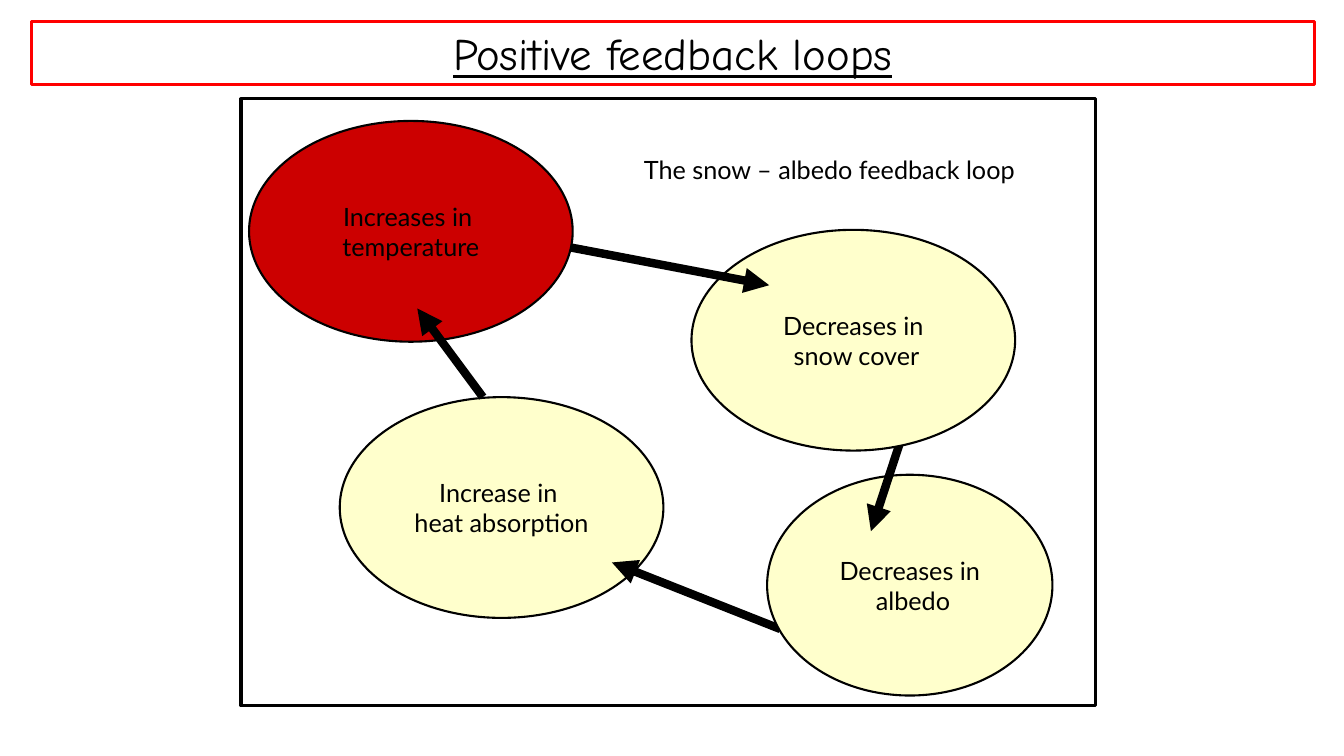
"""Builds a slide showing the snow – albedo feedback loop as four linked stages."""
from lxml import etree
from pptx import Presentation
from pptx.dml.color import RGBColor
from pptx.enum.shapes import MSO_CONNECTOR, MSO_SHAPE
from pptx.enum.text import MSO_ANCHOR, MSO_AUTO_SIZE, PP_ALIGN
from pptx.oxml.ns import qn
from pptx.util import Inches, Pt

RECTANGLE, OVAL = MSO_SHAPE.RECTANGLE, MSO_SHAPE.OVAL
STRAIGHT = MSO_CONNECTOR.STRAIGHT
TOP, MIDDLE = MSO_ANCHOR.TOP, MSO_ANCHOR.MIDDLE
CENTER = PP_ALIGN.CENTER
NO_AUTOFIT = MSO_AUTO_SIZE.NONE
TITLE_ONLY = 5

COLORS = {"ink": "000000", "paper": "FFFFFF", "border": "FF0000", "start": "CC0000", "stage": "FFFFCC"}
TITLE_FONT = {"name": "Comic Neue", "size": Pt(32), "underline": True, "bold": False}
BODY_FONT = {"name": "Lato", "size": Pt(18)}

TITLE = ("Positive feedback loops", (2.33, 2.8, 95.48, 8.4))
CAPTION = ("The snow – albedo feedback loop ", (41.7, 19.73, 40.5, 5.33))
FRAME_BOX = (17.93, 13.07, 63.6, 80.27)
STAGE_HEIGHT = 29.2
STAGES = [
    {"lines": ["Increases in ", "temperature"], "fill": "start", "corner": (18.53, 16), "width": 24.08,
     "arrow_in": (35.93, 52.53, 31.05, 40.8)},
    {"lines": ["Decreases in", " snow cover"], "fill": "stage", "corner": (51.45, 30.4), "width": 24.08,
     "arrow_in": (39.9, 31.87, 57.23, 37.73)},
    {"lines": ["Decreases in", " albedo"], "fill": "stage", "corner": (57.08, 62.8), "width": 21.23,
     "arrow_in": (67.8, 54, 64.8, 70.27)},
    {"lines": ["Increase in ", "heat absorption"], "fill": "stage", "corner": (25.28, 52.53), "width": 24.08,
     "arrow_in": (58.05, 83.2, 45.53, 74.4)},
]

presentation = Presentation()
presentation.slide_width, presentation.slide_height = Inches(13.33), Inches(7.5)
slide = presentation.slides.add_slide(presentation.slide_layouts[TITLE_ONLY])


def color(name):
    return RGBColor.from_string(COLORS[name])


def place(percentages):
    """Turn alternating horizontal and vertical slide percentages into lengths."""
    sides = (presentation.slide_width, presentation.slide_height) * 2
    return [round(side * share / 100) for side, share in zip(sides, percentages)]


def paint(shape, fill, line, width):
    if fill:
        shape.fill.solid()
        shape.fill.fore_color.rgb = color(fill)
    else:
        shape.fill.background()
    shape.line.color.rgb = color(line)
    shape.line.width = Pt(width)


def write(shape, lines, font_format, anchor=MIDDLE, wrap=True):
    frame = shape.text_frame
    frame.text = "\n".join(lines)
    for name, value in {"auto_size": NO_AUTOFIT, "word_wrap": wrap, "vertical_anchor": anchor}.items():
        setattr(frame, name, value)
    for paragraph in frame.paragraphs:
        paragraph.alignment = CENTER
        font = paragraph.runs[0].font
        font.color.rgb = color("ink")
        for name, value in font_format.items():
            setattr(font, name, value)


def add_outline(kind, box, fill, width):
    shape = slide.shapes.add_shape(kind, *place(box))
    shape.shadow.inherit = False
    paint(shape, fill, "ink", width)
    return shape


def add_arrow(ends):
    arrow = slide.shapes.add_connector(STRAIGHT, *place(ends))
    arrow.line.color.rgb = color("ink")
    arrow.line.width = Pt(6)
    etree.SubElement(arrow.line._get_or_add_ln(), qn("a:tailEnd"), type="triangle")
    etree.SubElement(arrow._element.spPr, qn("a:effectLst"))


title = slide.shapes.title
title_text, title_box = TITLE
for side, length in zip(("left", "top", "width", "height"), place(title_box)):
    setattr(title, side, length)
paint(title, "paper", "border", 2.25)
write(title, [title_text], TITLE_FONT, TOP)

caption_text, caption_box = CAPTION
caption = slide.shapes.add_textbox(*place(caption_box))
write(caption, [caption_text], BODY_FONT)
add_outline(RECTANGLE, FRAME_BOX, None, 2.25)

for stage in reversed(STAGES):
    box = (*stage["corner"], stage["width"], STAGE_HEIGHT)
    oval = add_outline(OVAL, box, stage["fill"], 1.5)
    write(oval, stage["lines"], BODY_FONT, wrap=False)
    add_arrow(stage["arrow_in"])

presentation.save("out.pptx")
